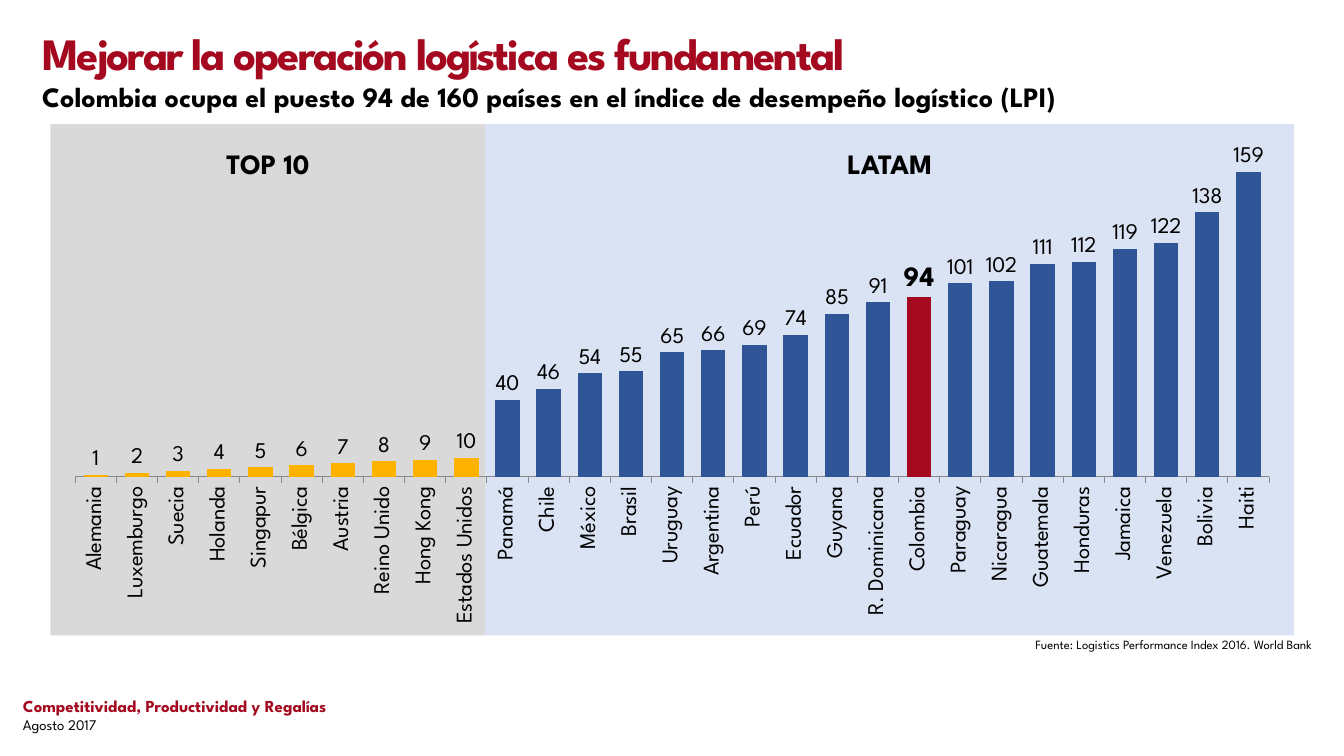
from lxml import etree
from pptx import Presentation
from pptx.chart.data import CategoryChartData
from pptx.dml.color import RGBColor
from pptx.enum.chart import XL_CHART_TYPE, XL_LABEL_POSITION, XL_TICK_MARK
from pptx.enum.shapes import MSO_SHAPE
from pptx.enum.text import MSO_ANCHOR, PP_ALIGN
from pptx.oxml import parse_xml
from pptx.oxml.ns import nsdecls
from pptx.util import Cm, Pt

FONT = "League Spartan"
RED = RGBColor(0xA4, 0x09, 0x1F)
BLACK = RGBColor(0, 0, 0)
BLUE = RGBColor(0x2F, 0x55, 0x97)
YELLOW = RGBColor(0xFF, 0xB3, 0x00)
GREY = RGBColor(0xD9, 0xD9, 0xD9)
PALE_BLUE = RGBColor(0xDA, 0xE3, 0xF3)
AXIS_GREY = RGBColor(0x88, 0x88, 0x88)

TITLE = "Mejorar la operación logística es fundamental"
SUBTITLE = "Colombia ocupa el puesto 94 de 160 países en el índice de desempeño logístico (LPI)"
SOURCE = "Fuente: Logistics Performance Index 2016. World Bank"
FOOTER = "Competitividad, Productividad y Regalías"
DATE = "Agosto 2017"
FOCUS = "Colombia"
TOP_10 = ["Alemania", "Luxemburgo", "Suecia", "Holanda", "Singapur", "Bélgica",
          "Austria", "Reino Unido", "Hong Kong", "Estados Unidos"]
LATAM = {
    "Panamá": 40, "Chile": 46, "México": 54, "Brasil": 55, "Uruguay": 65,
    "Argentina": 66, "Perú": 69, "Ecuador": 74, "Guyana": 85,
    "R. Dominicana": 91, "Colombia": 94, "Paraguay": 101, "Nicaragua": 102,
    "Guatemala": 111, "Honduras": 112, "Jamaica": 119, "Venezuela": 122,
    "Bolivia": 138, "Haiti": 159,
}
RANKING = {country: place for place, country in enumerate(TOP_10, 1)} | LATAM

# Panels, in centimetres
PANEL_LEFT, PANEL_TOP, PANEL_HEIGHT = 1.27, 3.13, 12.88
TOP_10_WIDTH, LATAM_WIDTH = 10.97, 20.37
HEADING_TOP, HEADING_WIDTH, HEADING_HEIGHT = 3.56, 3.2, 1.12


def style(font, size, color=BLACK, bold=False):
    font.name, font.size, font.bold = FONT, Pt(size), bold
    font.color.rgb = color


def add_run(paragraph, text, size, color=BLACK, bold=False):
    run = paragraph.add_run()
    run.text = text
    style(run.font, size, color, bold)
    return run


def add_text(slide, box, lines, align=PP_ALIGN.LEFT, anchor=MSO_ANCHOR.TOP, inset=None):
    """Add a text box with one (text, size, color, bold) tuple per paragraph."""
    frame = slide.shapes.add_textbox(*map(Cm, box)).text_frame
    frame.word_wrap = True
    frame.vertical_anchor = anchor
    if inset is not None:
        frame.margin_left = frame.margin_right = Cm(inset)
        frame.margin_top = frame.margin_bottom = Cm(inset)
    for number, line in enumerate(lines):
        paragraph = frame.add_paragraph() if number else frame.paragraphs[0]
        paragraph.alignment = align
        add_run(paragraph, *line)
    return frame


def add_panel(slide, left, width, color):
    panel = slide.shapes.add_shape(
        MSO_SHAPE.RECTANGLE, Cm(left), Cm(PANEL_TOP), Cm(width), Cm(PANEL_HEIGHT))
    panel.shadow.inherit = False
    panel.fill.solid()
    panel.fill.fore_color.rgb = color
    panel.line.fill.background()


def fix_plot_area(chart, x, y, w, h):
    """Place the inner plot area, as fractions of the chart."""
    plot_area = chart._chartSpace.chart.plotArea
    for layout in plot_area.findall("{*}layout"):
        plot_area.remove(layout)
    sizes = "".join(f'<c:{key} val="{value}"/>'
                    for key, value in zip("xywh", (x, y, w, h)))
    plot_area.insert(0, parse_xml(
        f'<c:layout {nsdecls("c")}><c:manualLayout><c:layoutTarget val="inner"/>'
        f'<c:xMode val="edge"/><c:yMode val="edge"/>{sizes}'
        '</c:manualLayout></c:layout>'.replace(
            sizes, sizes.replace("c:x ", "c:x ").replace("c:y ", "c:y "))))


def add_ranking_chart(slide):
    data = CategoryChartData(number_format="0")
    data.categories = list(RANKING)
    data.add_series("Puesto", list(RANKING.values()))
    chart = slide.shapes.add_chart(
        XL_CHART_TYPE.COLUMN_CLUSTERED, Cm(PANEL_LEFT), Cm(PANEL_TOP),
        Cm(TOP_10_WIDTH + LATAM_WIDTH), Cm(PANEL_HEIGHT), data).chart
    chart.has_legend = chart.has_title = False
    style(chart.font, 14)
    fix_plot_area(chart, 0.02, 0.09, 0.96, 0.6)

    places = chart.value_axis
    places.minimum_scale, places.maximum_scale = 0, 160
    places.has_major_gridlines = False
    places.visible = False
    countries = chart.category_axis
    countries.major_tick_mark = XL_TICK_MARK.OUTSIDE
    countries.format.line.color.rgb = AXIS_GREY
    countries.format.line.width = Pt(0.75)
    style(countries.tick_labels.font, 16)
    rotation = countries._element.txPr.bodyPr
    rotation.set("rot", "-5400000")
    rotation.set("vert", "horz")

    plot = chart.plots[0]
    plot.gap_width = 69
    plot.vary_by_categories = False
    bars = plot.series[0]
    bars.format.fill.solid()
    bars.format.fill.fore_color.rgb = BLUE
    labels = bars.data_labels
    labels.show_value = True
    labels.number_format, labels.number_format_is_linked = "0", False
    labels.position = XL_LABEL_POSITION.OUTSIDE_END
    style(labels.font, 16)

    focus = list(RANKING).index(FOCUS)
    highlights = dict.fromkeys(range(len(TOP_10)), YELLOW) | {focus: RED}
    for index, color in highlights.items():
        fill = bars.points[index].format.fill
        fill.solid()
        fill.fore_color.rgb = color
    focus_label = bars.points[focus].data_label
    style(focus_label.font, 20, bold=True)
    focus_label.position = XL_LABEL_POSITION.OUTSIDE_END


def main():
    prs = Presentation()
    prs.slide_width, prs.slide_height = Cm(33.87), Cm(19.05)
    slide = prs.slides.add_slide(prs.slide_layouts[5])

    title = slide.shapes.title
    title.left, title.top, title.width, title.height = map(Cm, (0.81, 0.53, 32.26, 1.55))
    title.text_frame.vertical_anchor = MSO_ANCHOR.TOP
    title.text_frame.word_wrap = True
    heading = title.text_frame.paragraphs[0]
    heading.alignment = PP_ALIGN.LEFT
    add_run(heading, TITLE, 32, RED, True).font._element.set("spc", "-150")

    subtitle = add_text(slide, (0.81, 1.98, 32.26, 0.99), [(SUBTITLE, 20, BLACK, True)])
    subtitle.paragraphs[0].line_spacing = 0.9
    add_text(slide, (23.34, 15.93, 9.96, 0.61), [(SOURCE, 9)],
             PP_ALIGN.RIGHT, MSO_ANCHOR.MIDDLE)
    add_text(slide, (0.33, 17.27, 23.24, 1.4),
             [(FOOTER, 12, RED, True), (DATE, 10.5)], inset=0.25)

    latam_left = PANEL_LEFT + TOP_10_WIDTH
    panels = [("TOP 10", PANEL_LEFT, TOP_10_WIDTH, GREY),
              ("LATAM", latam_left, LATAM_WIDTH, PALE_BLUE)]
    for _, left, width, color in panels:
        add_panel(slide, left, width, color)
    add_ranking_chart(slide)
    for name, left, width, _ in panels:
        add_text(slide, (left + (width - HEADING_WIDTH) / 2, HEADING_TOP,
                         HEADING_WIDTH, HEADING_HEIGHT),
                 [(name, 20, BLACK, True)], PP_ALIGN.CENTER)

    prs.save("out.pptx")


if __name__ == "__main__":
    main()
